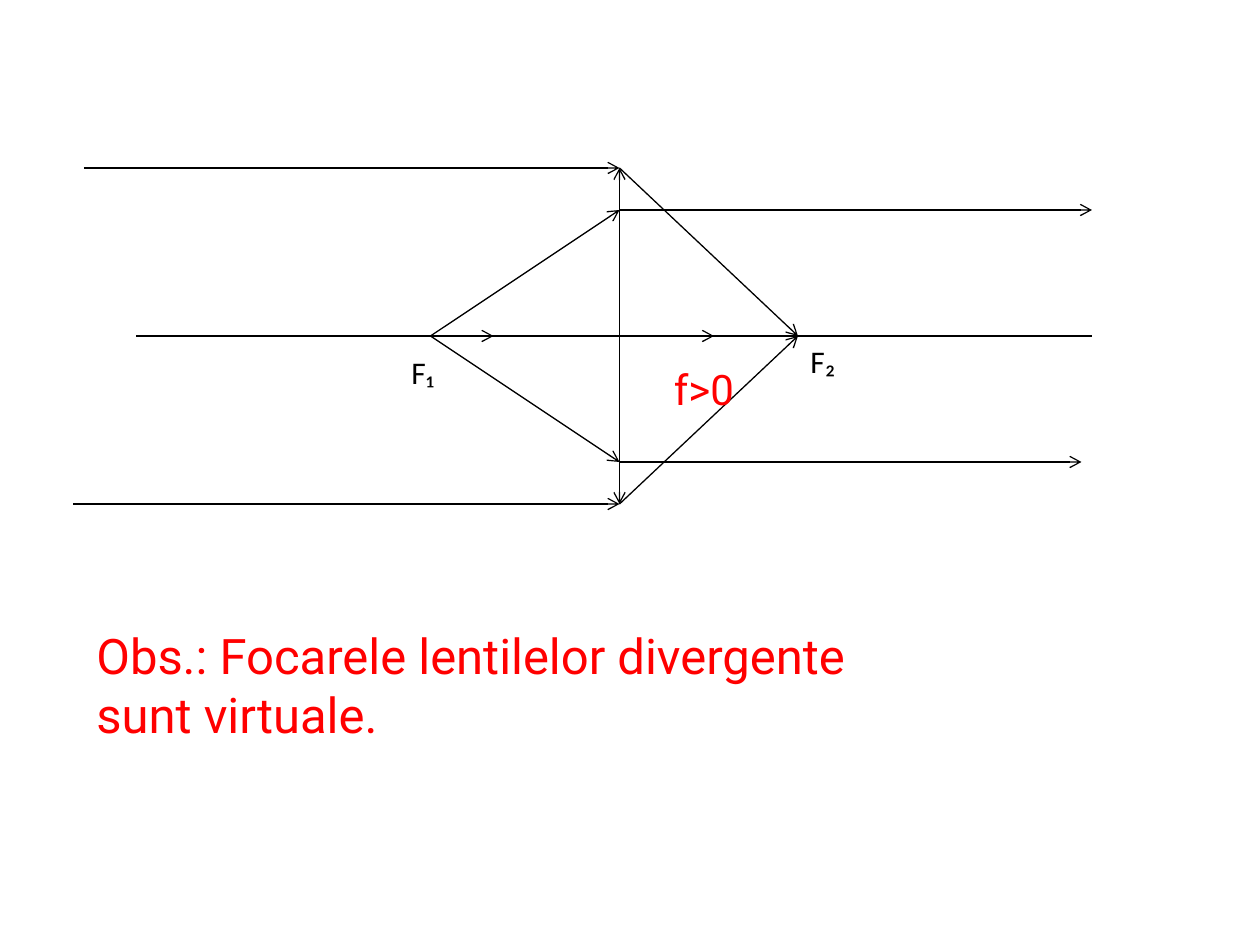
from pptx import Presentation
from pptx.dml.color import RGBColor
from pptx.enum.shapes import MSO_CONNECTOR
from pptx.enum.text import MSO_AUTO_SIZE
from pptx.oxml.xmlchemy import OxmlElement
from pptx.util import Inches, Pt

# The slide is a grid of 120 columns and 90 rows.
CELL = Inches(10) // 120
THEME = {
    "ink": RGBColor(0, 0, 0),
    "line": Pt(0.75),
    "label": {"name": "Calibri", "size": Pt(18), "color": RGBColor(0, 0, 0)},
    "value": {"name": "Roboto", "size": Pt(24), "color": RGBColor(255, 0, 0)},
    "note": {"name": "Roboto", "size": Pt(28), "color": RGBColor(255, 0, 0)},
}

# Columns of the lens and the foci, rows of the rays
LENS, LEFT, RIGHT = 59, 41, 76
TOP, UPPER, AXIS, LOWER, BASE = 16, 20, 32, 44, 48

END = ("tailEnd",)
BOTH = ("headEnd", "tailEnd")
RAYS = [
    # Optical axis
    ((13, AXIS), (47, AXIS), END),
    ((31, AXIS), (68, AXIS), END),
    ((61, AXIS), (104, AXIS), ()),
    # Lens
    ((LENS, TOP), (LENS, BASE), BOTH),
    # Parallel rays entering
    ((8, TOP), (LENS, TOP), END),
    ((7, BASE), (LENS, BASE), END),
    # Rays from the first focus
    ((LEFT, AXIS), (LENS, UPPER), END),
    ((LEFT, AXIS), (LENS, LOWER), END),
    # Parallel rays leaving
    ((LENS, UPPER), (104, UPPER), END),
    ((LENS, LOWER), (103, LOWER), END),
    # Rays to the second focus
    ((LENS, BASE), (RIGHT, AXIS), END),
    ((LENS, TOP), (RIGHT, AXIS), END),
]

# Column, row, width, height, words, style
TEXTS = [
    (38, 33, 5, 4.8, "F₁", "label"),
    (RIGHT, AXIS, 10, 4.8, "F₂", "label"),
    (63, 34, 13, 6, "f>0", "value"),
    (8, 59, 80, 6.8, "Obs.: Focarele lentilelor divergente sunt virtuale.", "note"),
]


def grid(*cells):
    return [int(cell * CELL) for cell in cells]


def add_ray(slide, start, end, heads):
    ray = slide.shapes.add_connector(MSO_CONNECTOR.STRAIGHT, *grid(*start, *end))
    ray.line.color.rgb = THEME["ink"]
    ray.line.width = THEME["line"]
    for head in heads:
        tip = OxmlElement(f"a:{head}")
        tip.set("type", "arrow")
        ray.line._get_or_add_ln().append(tip)
    ray._element.spPr.append(OxmlElement("a:effectLst"))


def add_text(slide, col, row, width, height, words, style):
    frame = slide.shapes.add_textbox(*grid(col, row, width, height)).text_frame
    frame.word_wrap = True
    frame.auto_size = MSO_AUTO_SIZE.SHAPE_TO_FIT_TEXT
    run = frame.paragraphs[0].add_run()
    run.text = words
    for key, value in THEME[style].items():
        if key == "color":
            run.font.color.rgb = value
        else:
            setattr(run.font, key, value)


def main():
    deck = Presentation()
    deck.slide_width, deck.slide_height = grid(120, 90)
    slide = deck.slides.add_slide(deck.slide_layouts[6])
    for ray in RAYS:
        add_ray(slide, *ray)
    for text in TEXTS:
        add_text(slide, *text)
    deck.save("out.pptx")


if __name__ == "__main__":
    main()
